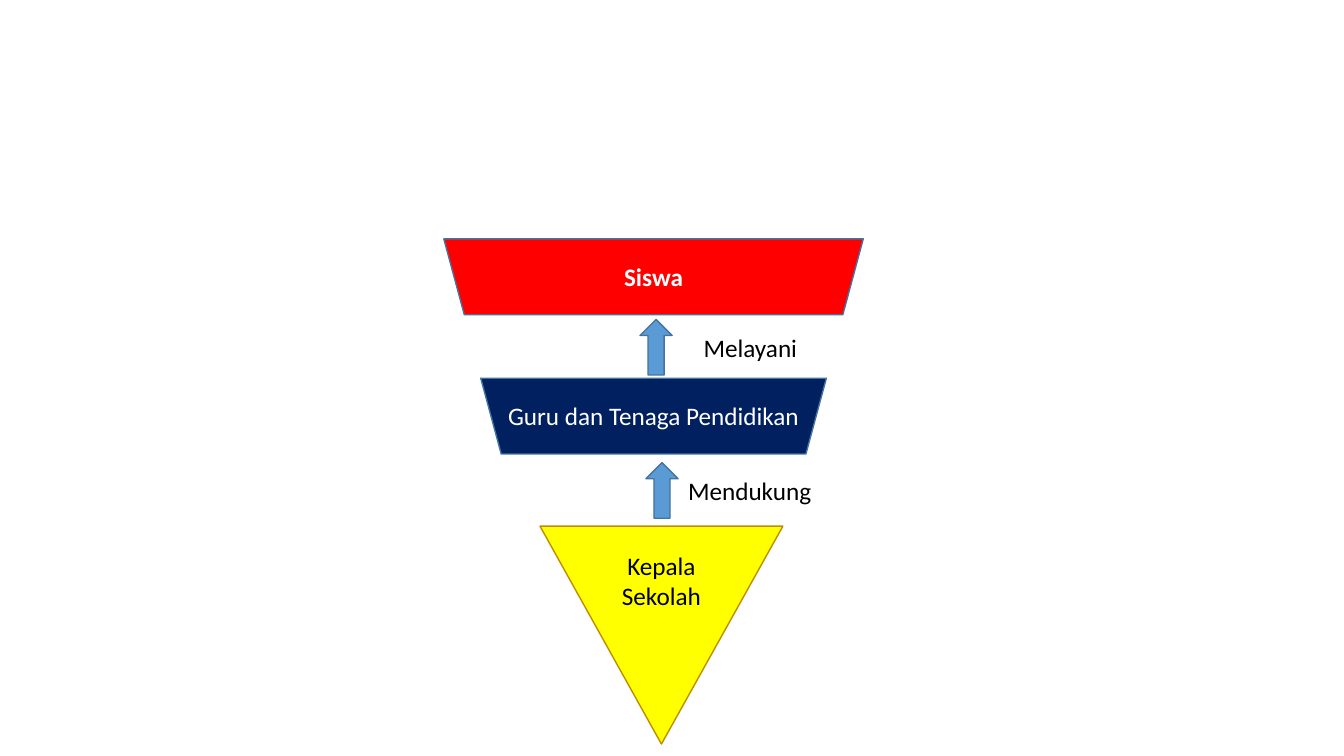
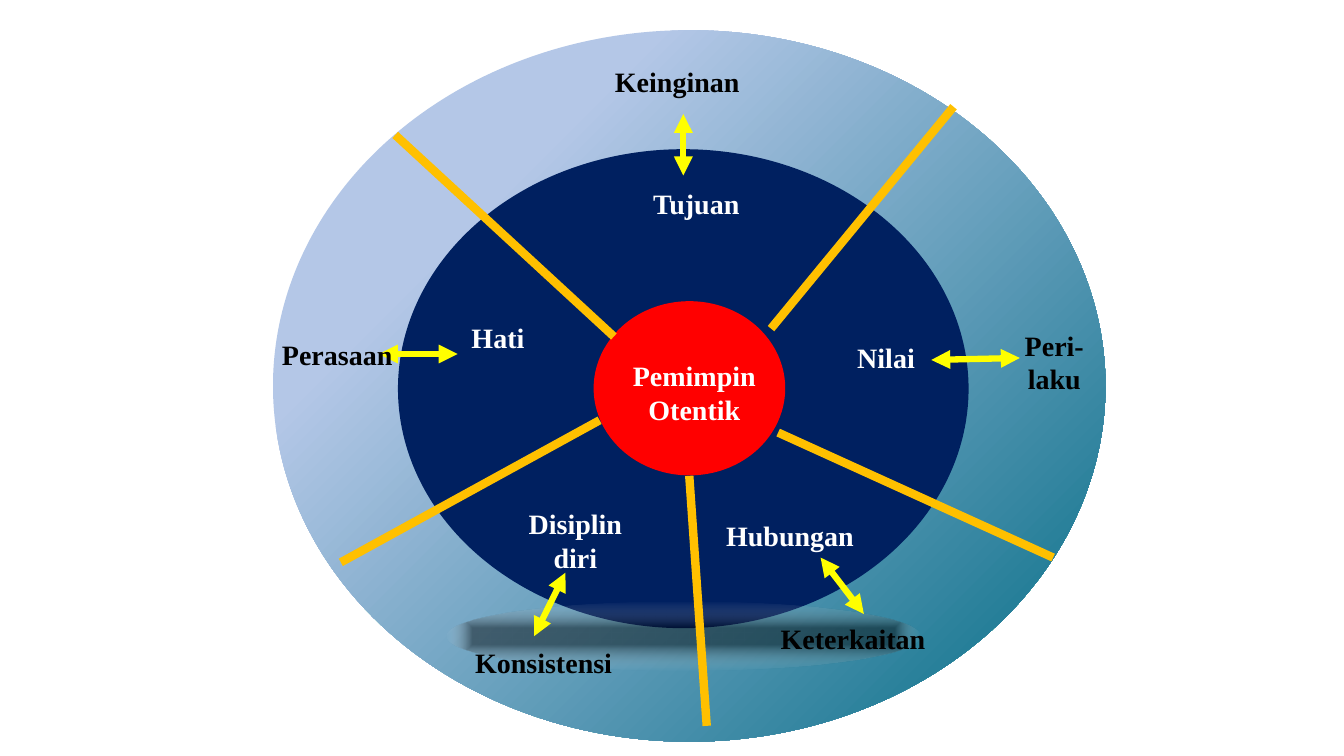
"""Build two slides: a service hierarchy of a school and a wheel of authentic leadership."""
from lxml import etree
from pptx import Presentation
from pptx import util as u
from pptx.dml import color
from pptx.enum import shapes, text
from pptx.oxml import ns

NAVY, RED, YELLOW, GOLD = "002060", "FF0000", "FFFF00", "FFC000"
WHITE, BLACK, BLUE, EDGE = "FFFFFF", "000000", "5B9BD5", "43739E"
PLAIN = {"name": "Calibri", "size": u.Pt(18), "bold": False}
STRONG = PLAIN | {"bold": True}
SERIF = {"name": "Times New Roman", "size": u.Pt(20), "bold": True}
CENTER, LEFT = text.PP_ALIGN.CENTER, text.PP_ALIGN.LEFT
KINDS = shapes.MSO_SHAPE


def rgb(value):
    """Return the colour of a hex string."""
    return color.RGBColor.from_string(value)


def add_xml(parent, tag, **attributes):
    """Append a drawing element to its parent."""
    return etree.SubElement(parent, ns.qn(tag), attributes)


def write(frame, words, look, ink, align=CENTER):
    """Fill a text frame with one paragraph per line of words."""
    frame.word_wrap = True
    for index, line in enumerate(words.split("\n")):
        para = frame.add_paragraph() if index else frame.paragraphs[0]
        para.alignment = align
        span = para.add_run()
        span.text = line
        for key, value in look.items():
            setattr(span.font, key, value)
        span.font.color.rgb = rgb(ink)


def add_label(page, words, center, top, width, look, ink, align=CENTER):
    """Add a text box placed by its horizontal centre and its top."""
    box = page.shapes.add_textbox(u.Cm(center - width / 2), u.Cm(top), u.Cm(width), u.Cm(1.02))
    write(box.text_frame, words, look, ink, align)


def add_figure(page, kind, place, fill=None, edge=None):
    """Add a preset shape with an optional plain fill and outline."""
    figure = page.shapes.add_shape(kind, *map(u.Cm, place))
    figure.shadow.inherit = False
    if fill:
        figure.fill.solid()
        figure.fill.fore_color.rgb = rgb(fill)
    if edge:
        figure.line.color.rgb = rgb(edge)
        figure.line.width = u.Pt(1)
    else:
        figure.line.fill.background()
    return figure


def add_gradient(figure, stops):
    """Give a shape a diagonal gradient of two positions and colours."""
    figure.fill.gradient()
    figure.fill.gradient_angle = 315
    for stop, (position, shade) in zip(figure.fill.gradient_stops, stops):
        stop.position = position
        stop.color.rgb = rgb(shade)


def soften(figure, opacities):
    """Turn a gradient into a transparent one that spreads from the centre."""
    gradient = figure.fill._xPr.find(ns.qn("a:gradFill"))
    for shade, opacity in zip(gradient.iter(ns.qn("a:srgbClr")), opacities):
        add_xml(shade, "a:alpha", val=str(opacity * 1000))
    gradient.remove(gradient.find(ns.qn("a:lin")))
    spread = add_xml(gradient, "a:path", path="shape")
    add_xml(spread, "a:fillToRect", **dict.fromkeys("ltrb", "50000"))


def add_line(page, ends, shade, width, arrows=False):
    """Add a straight line, with arrowheads at both ends if wanted."""
    line = page.shapes.add_connector(shapes.MSO_CONNECTOR.STRAIGHT, *map(u.Cm, ends))
    line.line.color.rgb = rgb(shade)
    line.line.width = u.Pt(width)
    if arrows:
        for tag in ("a:headEnd", "a:tailEnd"):
            add_xml(line.line._ln, tag, type="triangle")
    add_xml(line._element.spPr, "a:effectLst")


def build_hierarchy(page):
    """Draw the tiers of the school, each serving the one above."""
    axis = 16.47
    principal = add_figure(page, KINDS.FLOWCHART_MERGE, (13.61, 13.26, 6.12, 5.49), YELLOW, "BD8E00")
    principal.text_frame.vertical_anchor = text.MSO_ANCHOR.MIDDLE
    write(principal.text_frame, "Kepala Sekolah", PLAIN, BLACK)
    for words, top, width, fill, look in (
        ("Guru dan Tenaga Pendidikan", 9.53, 8.71, NAVY, PLAIN),
        ("Siswa", 6.02, 10.57, RED, STRONG),
    ):
        tier = add_figure(page, KINDS.TRAPEZOID, (axis - width / 2, top, width, 1.91), fill, EDGE)
        tier.adjustments[0] = 0.27
        tier.rotation = 180
        add_label(page, words, axis, top + 0.43, 8.2, look, WHITE)
    for words, left, top, center in (("Mendukung", 16.28, 11.66, 20), ("Melayani", 16.13, 8.05, 20.39)):
        add_figure(page, KINDS.UP_ARROW, (left, top, 0.81, 1.4), BLUE, EDGE)
        add_label(page, words, center, top + 0.19, 5.82, PLAIN, BLACK, LEFT)


def build_wheel(page):
    """Draw the rings, spokes and paired qualities of the leader."""
    ring = add_figure(page, KINDS.OVAL, (6.88, 0.76, 20.98, 17.93))
    add_gradient(ring, ((0.25, "B4C7E7"), (1, "046D86")))
    add_figure(page, KINDS.OVAL, (10.03, 3.76, 14.38, 12.07), NAVY)
    shade = add_figure(page, KINDS.OVAL, (11.25, 15.16, 11.94, 1.73))
    add_gradient(shade, ((0.24, BLACK), (1, WHITE)))
    soften(shade, (44, 0))
    add_figure(page, KINDS.OVAL, (14.96, 7.59, 4.83, 4.39), RED)
    add_label(page, "Pemimpin Otentik", 17.5, 8.92, 3.8, SERIF, WHITE)
    for spoke in (
        (15.47, 8.48, 9.96, 3.4),
        (19.43, 8.28, 24.03, 2.69),
        (19.61, 10.9, 26.54, 14.05),
        (17.37, 11.99, 17.81, 18.29),
        (15.11, 10.59, 8.59, 14.17),
    ):
        add_line(page, spoke, GOLD, 6)
    for inner, inner_at, arrow, outer, outer_at in (
        ("Tujuan", (17.55, 4.57), (17.22, 4.42, 17.22, 2.87), "Keinginan", (17.07, 1.5)),
        ("Nilai", (22.33, 8.46), (23.47, 9.07, 25.7, 9.02), "Peri-\nlaku", (26.57, 8.15)),
        ("Hubungan", (19.91, 12.95), (20.68, 14.05, 21.77, 15.47), "Keterkaitan", (21.5, 15.54)),
        ("Disiplin diri", (14.5, 12.65), (14.25, 14.43, 13.46, 16.03), "Konsistensi", (13.7, 16.13)),
        ("Hati", (12.55, 7.95), (11.53, 8.92, 9.55, 8.92), "Perasaan", (8.5, 8.38)),
    ):
        add_label(page, inner, *inner_at, 3.8, SERIF, WHITE)
        add_line(page, arrow, YELLOW, 4.5, arrows=True)
        add_label(page, outer, *outer_at, 5.76, SERIF, BLACK)


def main():
    """Build the slides and save the deck."""
    deck = Presentation()
    deck.slide_width, deck.slide_height = u.Cm(33.87), u.Cm(19.05)
    for build in (build_hierarchy, build_wheel):
        build(deck.slides.add_slide(deck.slide_layouts[6]))
    deck.save("out.pptx")


if __name__ == "__main__":
    main()
